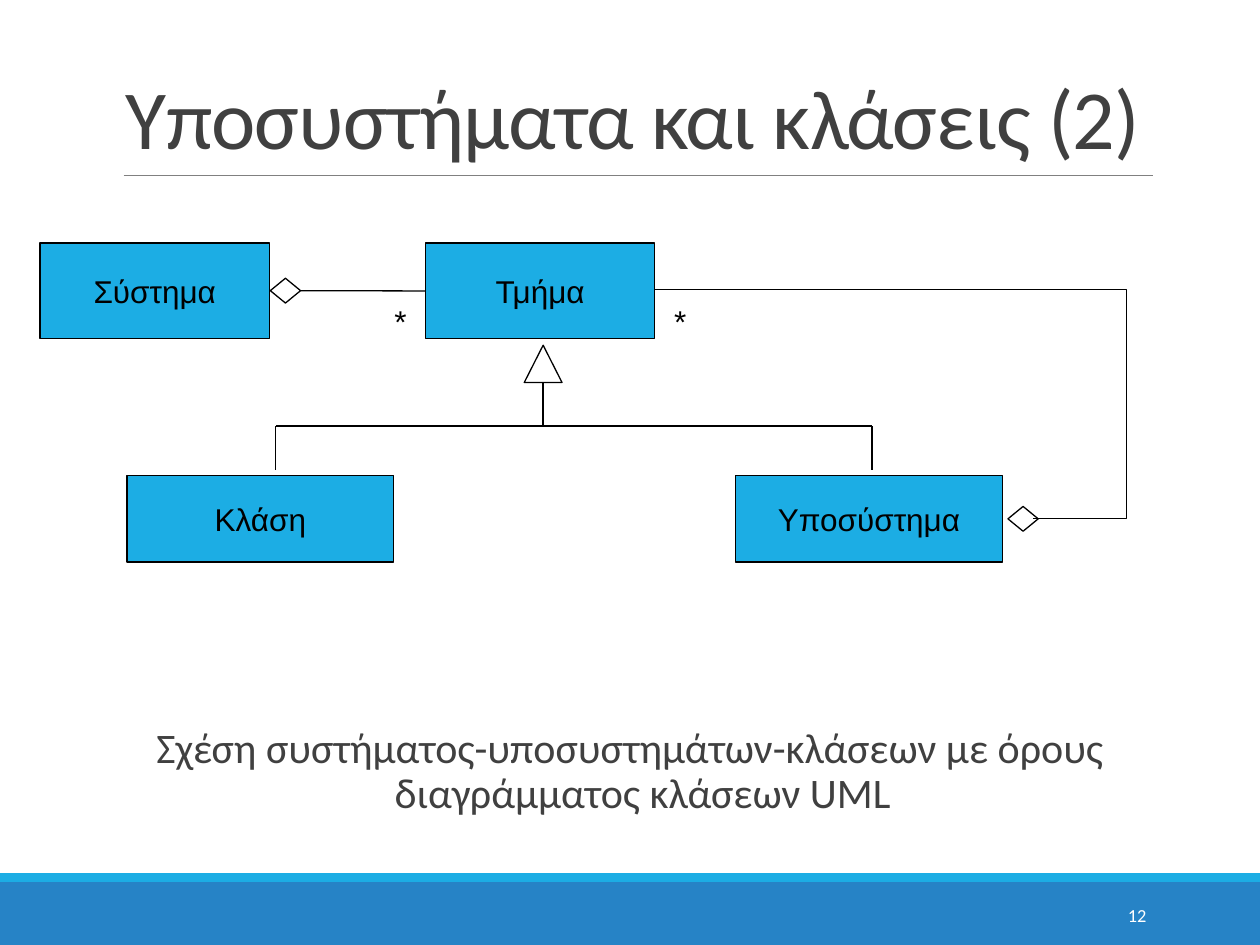
"""Build the UML slide on subsystems and classes."""
from lxml.etree import SubElement
from pptx import Presentation
from pptx.dml.color import RGBColor as Rgb
from pptx.enum.shapes import MSO_CONNECTOR as Link, MSO_SHAPE as Kind
from pptx.enum.text import MSO_ANCHOR as Anchor, PP_ALIGN as Align
from pptx.oxml.ns import qn
from pptx.util import Cm, Pt

HUES = {"blue": "2683C6", "sky": "1CADE4", "ink": "000000",
        "dark": "404040", "gray": "808080", "white": "FFFFFF"}

deck = Presentation()
deck.slide_width, deck.slide_height = Cm(25.4), Cm(19.05)
slide = deck.slides.add_slide(deck.slide_layouts[6])
shapes = slide.shapes


def write(shape, text, size=18, font="Arial", hue="ink", align=Align.LEFT,
          anchor=Anchor.TOP, wrap=False, lead=None, track=None):
    frame = shape.text_frame
    frame.word_wrap, frame.vertical_anchor = wrap, anchor
    para = frame.paragraphs[0]
    para.alignment, para.line_spacing = align, lead
    run = para.add_run()
    run.text = text
    run.font.size, run.font.name = Pt(size), font
    run.font.color.rgb = Rgb.from_string(HUES[hue])
    if track:
        run.font._element.set("spc", str(track))
    return para


def paint(shape, fill=None, line=None, width=0.75):
    if hasattr(shape, "fill"):
        shape.shadow.inherit = False
        if fill:
            shape.fill.solid()
            shape.fill.fore_color.rgb = Rgb.from_string(HUES[fill])
        else:
            shape.fill.background()
    else:
        SubElement(shape._element.spPr, qn("a:effectLst"))
    if line:
        shape.line.color.rgb = Rgb.from_string(HUES[line])
        shape.line.width = Pt(width)
    else:
        shape.line.fill.background()
    return shape


for top, high, hue in [(17.78, 1.27, "blue"), (17.6, 0.18, "sky")]:
    paint(shapes.add_shape(Kind.RECTANGLE, 0, Cm(top), Cm(25.4), Cm(high)), hue)

rule = shapes.add_connector(Link.STRAIGHT, Cm(2.49), Cm(3.53), Cm(23.24), Cm(3.53))
paint(rule, line="gray", width=0.5)

title = shapes.add_textbox(Cm(2.29), Cm(0.28), Cm(20.96), Cm(3.2))
write(title, "Υποσυστήματα και κλάσεις (2)", size=48, font="Calibri", hue="dark",
      anchor=Anchor.BOTTOM, wrap=True, lead=0.85, track=-50)

note = shapes.add_textbox(Cm(1.27), Cm(14.53), Cm(22.86), Cm(2.36))
note.text_frame.margin_left = note.text_frame.margin_right = 0
para = write(note, "Σχέση συστήματος-υποσυστημάτων-κλάσεων με όρους διαγράμματος κλάσεων UML",
             size=24, font="Calibri", hue="dark", align=Align.CENTER, wrap=True, lead=0.9)
para.space_before, para.space_after = Pt(12), Pt(2)
props = para._p.get_or_add_pPr()
props.set("marL", str(Cm(0.51)))
props.set("indent", str(-Cm(0.51)))

page = shapes.add_textbox(Cm(20.62), Cm(17.93), Cm(2.74), Cm(1.02))
write(page, "12", size=10.5, font="Calibri", hue="white", align=Align.RIGHT,
      anchor=Anchor.MIDDLE, wrap=True)

boxes = {}
for name, left, top, wide, high in [
        ("Κλάση", 2.56, 9.58, 5.38, 1.75), ("Υποσύστημα", 14.83, 9.58, 5.38, 1.75),
        ("Τμήμα", 8.58, 4.9, 4.62, 1.93), ("Σύστημα", 0.81, 4.9, 4.62, 1.93)]:
    box = shapes.add_shape(Kind.RECTANGLE, Cm(left), Cm(top), Cm(wide), Cm(high))
    write(paint(box, "sky", "ink"), name, align=Align.CENTER, anchor=Anchor.MIDDLE)
    boxes[name] = box

paint(shapes.add_shape(Kind.ISOSCELES_TRIANGLE, Cm(10.57), Cm(6.96), Cm(0.76), Cm(0.75)),
      line="ink")
for x1, y1, x2, y2 in [(5.56, 8.59, 17.58, 8.59), (5.56, 8.59, 5.56, 9.47),
                       (17.58, 8.59, 17.58, 9.47), (10.95, 7.71, 10.95, 8.59)]:
    paint(shapes.add_connector(Link.STRAIGHT, Cm(x1), Cm(y1), Cm(x2), Cm(y2)), line="ink")

gems = [paint(shapes.add_shape(Kind.DIAMOND, Cm(left), Cm(mid - 0.25), Cm(0.61), Cm(0.5)),
              line="ink") for left, mid in [(5.45, 5.86), (20.32, 10.46)]]
link = shapes.add_connector(Link.STRAIGHT, Cm(6.06), Cm(5.86), Cm(8.58), Cm(5.86))
link.begin_connect(gems[0], 3)
link.end_connect(boxes["Τμήμα"], 1)
paint(link, line="ink")

loop = shapes.build_freeform(Cm(20.83), Cm(10.46), scale=1.0)
loop.add_line_segments([(Cm(22.71), Cm(10.46)), (Cm(22.71), Cm(5.84)),
                        (Cm(13.2), Cm(5.84))], close=False)
paint(loop.convert_to_shape(), line="ink")

for left in (7.7, 13.34):
    write(shapes.add_textbox(Cm(left), Cm(5.97), Cm(0.76), Cm(1.02)), "*")

deck.save("out.pptx")
